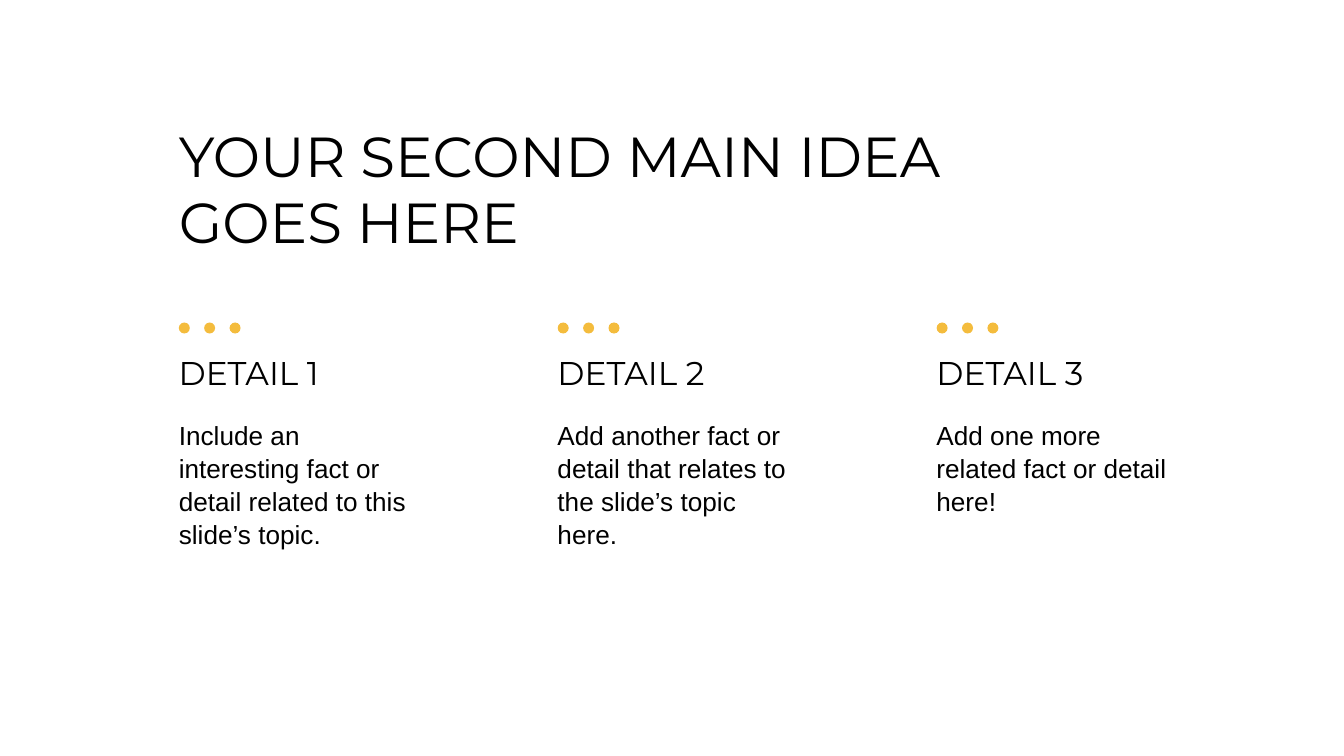
from pptx import Presentation
from pptx.dml.color import RGBColor
from pptx.enum.shapes import MSO_SHAPE
from pptx.enum.text import MSO_ANCHOR, MSO_AUTO_SIZE, PP_ALIGN
from pptx.oxml.ns import qn
from pptx.util import Pt

BLACK = RGBColor(0x00, 0x00, 0x00)
AMBER = RGBColor(0xF4, 0xBC, 0x3D)

LEFT = 88.6
COLUMN_PITCH = 203
COLUMN_WIDTH = 142.4
INSET = 7.2

TITLE_LINES = ["YOUR SECOND MAIN IDEA ", "GOES HERE"]
DETAILS = [
    ("DETAIL 1", "Include an interesting fact or detail related to this slide’s topic."),
    ("DETAIL 2", "Add another fact or detail that relates to the slide’s topic here."),
    ("DETAIL 3", "Add one more related fact or detail here!"),
]


class DetailSlide:
    heading_font = "Montserrat"
    body_font = "Arial"

    def __init__(self, slide):
        self.slide = slide

    def _place(self, holder, left, top, width, height):
        holder.left, holder.top = Pt(left), Pt(top)
        holder.width, holder.height = Pt(width), Pt(height)

    def _write(self, holder, lines, font, size, anchor=MSO_ANCHOR.TOP, spacing=1.0):
        """Fill a text holder with one paragraph, its lines split by breaks."""
        frame = holder.text_frame
        frame.word_wrap = True
        frame.auto_size = MSO_AUTO_SIZE.NONE
        frame.vertical_anchor = anchor
        frame.margin_left = frame.margin_right = Pt(INSET)
        frame.margin_top = frame.margin_bottom = Pt(INSET)
        paragraph = frame.paragraphs[0]
        paragraph.alignment = PP_ALIGN.LEFT
        paragraph.line_spacing = spacing
        paragraph.space_before = Pt(0)
        for index, line in enumerate(lines):
            if index:
                paragraph.add_line_break()
            run = paragraph.add_run()
            run.text = line
            run.font.name = font
            run.font.size = Pt(size)
            run.font.color.rgb = BLACK
        return paragraph

    def title(self, lines):
        holder = self.slide.shapes.title
        self._place(holder, LEFT, 57.6, 578.2, 100)
        self._write(holder, lines, self.heading_font, 30.2, spacing=0.98)
        holder.text_frame.margin_top = Pt(9)

    def dots(self, left, top=172.8, diameter=5.9, pitch=13.6):
        group = self.slide.shapes.add_group_shape()
        for index in range(3):
            dot = group.shapes.add_shape(
                MSO_SHAPE.OVAL, Pt(left + index * pitch), Pt(top), Pt(diameter), Pt(diameter))
            dot.shadow.inherit = False
            dot.fill.solid()
            dot.fill.fore_color.rgb = AMBER
            dot.line.fill.background()

    def heading(self, left, text):
        box = self.slide.shapes.add_textbox(Pt(left), Pt(178.6), Pt(COLUMN_WIDTH), Pt(38.9))
        self._write(box, [text], self.heading_font, 17.6, MSO_ANCHOR.BOTTOM)

    def description(self, left, text, holder=None):
        """Write a column's text in the given placeholder, or in a new text box."""
        if holder is None:
            holder = self.slide.shapes.add_textbox(0, 0, 0, 0)
        self._place(holder, left, 216.7, COLUMN_WIDTH, 131)
        paragraph = self._write(holder, [text], self.body_font, 14, spacing=1.05)
        if holder.is_placeholder:
            properties = paragraph._p.get_or_add_pPr()
            properties.set("marL", "0")
            properties.set("indent", "0")
            properties.append(properties.makeelement(qn("a:buNone"), {}))


def main():
    presentation = Presentation()
    presentation.slide_width, presentation.slide_height = Pt(720), Pt(405)
    slide = presentation.slides.add_slide(presentation.slide_layouts[1])
    page = DetailSlide(slide)
    page.title(TITLE_LINES)
    body = slide.placeholders[1]
    for column, (heading, description) in enumerate(DETAILS):
        left = LEFT + column * COLUMN_PITCH
        page.dots(left + INSET)
        page.heading(left, heading)
        page.description(left, description, body if column == 0 else None)
    presentation.save("out.pptx")


if __name__ == "__main__":
    main()
